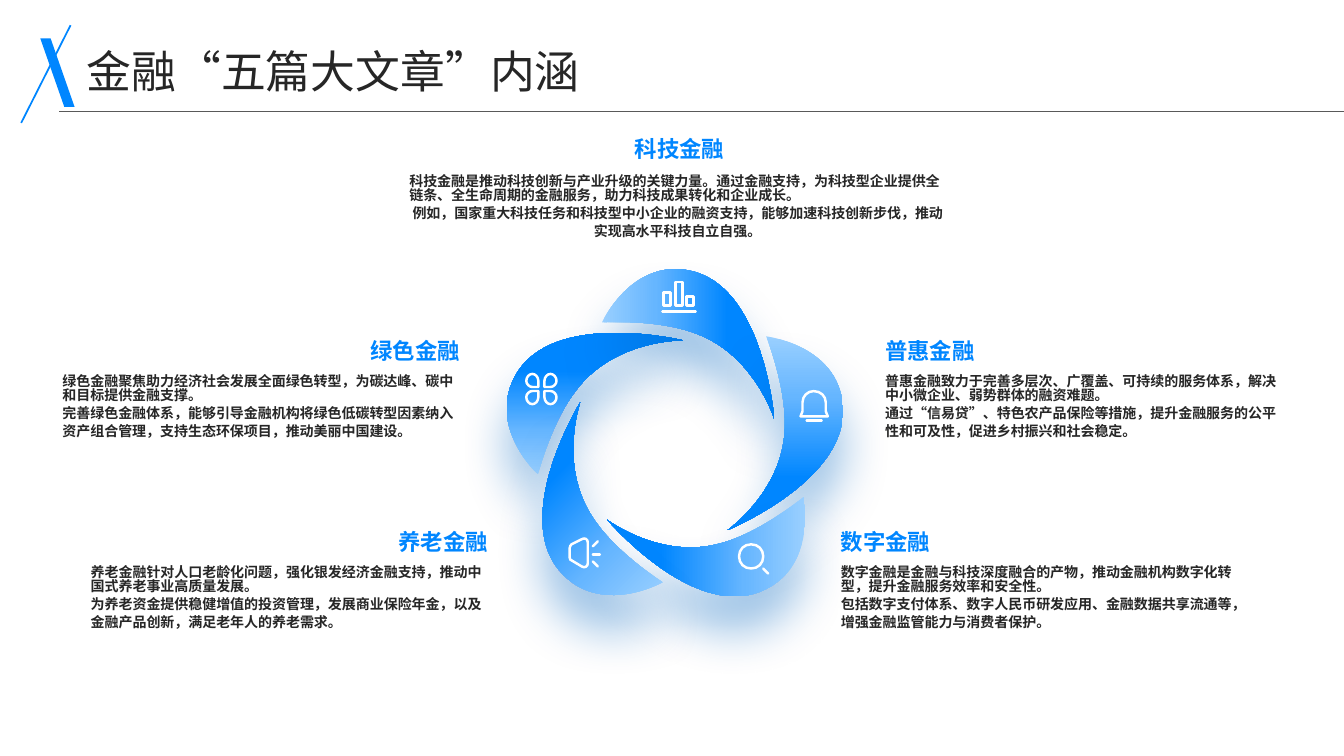
from copy import deepcopy
from math import cos, radians, sin

from pptx import Presentation
from pptx.dml.color import RGBColor
from pptx.enum.shapes import MSO_CONNECTOR, MSO_SHAPE
from pptx.enum.text import MSO_ANCHOR, PP_ALIGN
from pptx.oxml import parse_xml
from pptx.oxml.ns import nsdecls, qn
from pptx.oxml.xmlchemy import OxmlElement
from pptx.util import Inches, Pt

LEFT, CENTER, RIGHT = PP_ALIGN.LEFT, PP_ALIGN.CENTER, PP_ALIGN.RIGHT
TOP, MIDDLE, BOTTOM = MSO_ANCHOR.TOP, MSO_ANCHOR.MIDDLE, MSO_ANCHOR.BOTTOM
BLUE = RGBColor(0x00, 0x86, 0xFF)
INK = RGBColor(0x26, 0x26, 0x26)
GRAY = RGBColor(0x59, 0x59, 0x59)
WHITE = RGBColor(0xFF, 0xFF, 0xFF)
PETAL_STOPS = [(0, RGBColor(0x99, 0xCF, 0xFF)), (0.31, RGBColor(0x66, 0xB6, 0xFF)), (0.73, BLUE)]
FONT = "Noto Sans CJK SC"

TITLE = "金融“五篇大文章”内涵"
# heading, body left, body top, body width, heading alignment, second paragraph alignment, paragraphs
TOPICS = [
    ("绿色金融", 0.62, 3.68, 3.94, RIGHT, LEFT, [
        "绿色金融聚焦助力经济社会发展全面绿色转型，为碳达峰、碳中和目标提供金融支撑。",
        "完善绿色金融体系，能够引导金融机构将绿色低碳转型因素纳入资产组合管理，支持生态环保项目，推动美丽中国建设。"]),
    ("养老金融", 0.9, 5.58, 3.94, RIGHT, LEFT, [
        "养老金融针对人口老龄化问题，强化银发经济金融支持，推动中国式养老事业高质量发展。",
        "为养老资金提供稳健增值的投资管理，发展商业保险年金，以及金融产品创新，满足老年人的养老需求。"]),
    ("普惠金融", 8.78, 3.68, 3.94, LEFT, LEFT, [
        "普惠金融致力于完善多层次、广覆盖、可持续的服务体系，解决中小微企业、弱势群体的融资难题。",
        "通过“信易贷”、特色农产品保险等措施，提升金融服务的公平性和可及性，促进乡村振兴和社会稳定。"]),
    ("数字金融", 8.34, 5.58, 3.94, LEFT, LEFT, [
        "数字金融是金融与科技深度融合的产物，推动金融机构数字化转型，提升金融服务效率和安全性。",
        "包括数字支付体系、数字人民币研发应用、金融数据共享流通等，增强金融监管能力与消费者保护。"]),
    ("科技金融", 4.06, 1.7, 5.32, CENTER, CENTER, [
        "科技金融是推动科技创新与产业升级的关键力量。通过金融支持，为科技型企业提供全链条、全生命周期的金融服务，助力科技成果转化和企业成长。",
        "例如，国家重大科技任务和科技型中小企业的融资支持，能够加速科技创新步伐，推动实现高水平科技自立自强。"]),
]

# An outline is a start point, then steps: (x, y) is a line, six numbers are a cubic curve.
RING_CENTER = (6.69, 4.39)
TOP_PETAL = [(5.97, 3.2), (5.97, 3.2, 6.27, 2.55, 6.86, 2.69), (7.58, 2.86, 7.68, 4.16, 7.68, 4.16),
             (7.68, 4.16, 7.49, 3.54, 6.93, 3.32), (6.54, 3.16, 5.97, 3.2, 5.97, 3.2)]
PETALS = [(-72, 90), (0, 0), (72, 270), (144, 180), (216, 135)]  # turn, gradient angle

CLOVER_CENTER = (5.37, 3.86)
LEAF = [(0.03, 0.02), (0.09, 0.02), (0.12, 0.02, 0.15, 0.05, 0.15, 0.08),
        (0.15, 0.12, 0.12, 0.15, 0.09, 0.15), (0.06, 0.15, 0.03, 0.12, 0.03, 0.08)]
BARS = [(6.58, 2.9), (6.7, 2.8), (6.81, 2.94)]
BAR_WIDTH, BAR_BOTTOM = 0.07, 3.03
BELL = [(7.94, 4.13), (7.96, 4.08), (7.96, 3.99), (7.96, 3.93, 8.01, 3.88, 8.07, 3.88),
        (8.14, 3.88, 8.19, 3.93, 8.19, 3.99), (8.19, 4.08), (8.21, 4.13)]
LENS = [(7.33, 5.52), (7.33, 5.45, 7.38, 5.4, 7.45, 5.4), (7.52, 5.4, 7.57, 5.45, 7.57, 5.52),
        (7.57, 5.59, 7.52, 5.64, 7.45, 5.64), (7.38, 5.64, 7.33, 5.59, 7.33, 5.52)]
HORN = [(5.65, 5.44), (5.65, 5.42, 5.66, 5.41, 5.67, 5.4), (5.77, 5.35),
        (5.8, 5.33, 5.83, 5.35, 5.83, 5.38), (5.83, 5.59),
        (5.83, 5.62, 5.8, 5.64, 5.77, 5.62), (5.67, 5.56), (5.66, 5.56, 5.65, 5.55, 5.65, 5.53)]


def pairs(part):
    return list(zip(part[::2], part[1::2]))


def remap(outline, move):
    """Apply move(x, y) to every point of an outline."""
    return [sum((move(x, y) for x, y in pairs(part)), ()) for part in outline]


def turn_on_ring(degrees):
    """Return a move that rotates clockwise about the centre of the ring."""
    (cx, cy), c, s = RING_CENTER, cos(radians(degrees)), sin(radians(degrees))
    return lambda x, y: (cx + (x - cx) * c - (y - cy) * s, cy + (x - cx) * s + (y - cy) * c)


def points_along(outline, steps=20):
    """Sample an outline, to find its bounds."""
    points = [outline[0]]
    for part in outline[1:]:
        knots = [points[-1]] + pairs(part)
        if len(part) == 2:
            points.append(part)
            continue
        for t in (step / steps for step in range(1, steps + 1)):
            weights = ((1 - t) ** 3, 3 * t * (1 - t) ** 2, 3 * t * t * (1 - t), t ** 3)
            points.append(tuple(sum(w * k[axis] for w, k in zip(weights, knots)) for axis in (0, 1)))
    return points


def add_outline(page, outlines):
    """Draw one freeform with true curves; an outline of only two points stays open."""
    xs, ys = zip(*(point for outline in outlines for point in points_along(outline)))
    left, top = Inches(min(xs)), Inches(min(ys))
    builder = page.shapes.build_freeform(left, top, scale=1.0)
    builder.add_line_segments([(Inches(max(xs)), Inches(max(ys)))], close=False)
    shape = builder.convert_to_shape()
    track = next(shape._element.spPr.iter(qn("a:path")))
    for child in list(track):
        track.remove(child)
    for outline in outlines:
        for index, part in enumerate(outline):
            tag = "a:moveTo" if index == 0 else "a:lnTo" if len(part) == 2 else "a:cubicBezTo"
            step = OxmlElement(tag)
            for x, y in pairs(part):
                point = OxmlElement("a:pt")
                point.set("x", str(Inches(x) - left))
                point.set("y", str(Inches(y) - top))
                step.append(point)
            track.append(step)
        if len(outline) > 2:
            track.append(OxmlElement("a:close"))
    shape.shadow.inherit = False
    return shape


def add_petal(page, turn, angle):
    petal = add_outline(page, [remap(TOP_PETAL, turn_on_ring(turn))])
    petal.line.fill.background()
    petal.fill.gradient()
    petal.fill.gradient_angle = angle
    properties = petal._element.spPr
    stop_list = properties.find(qn("a:gradFill")).find(qn("a:gsLst"))
    stop_list.append(deepcopy(stop_list[0]))
    for stop, (position, color) in zip(petal.fill.gradient_stops, PETAL_STOPS):
        stop.position = position
        stop.color.rgb = color
    properties.find(qn("a:effectLst")).append(parse_xml(
        f'<a:outerShdw {nsdecls("a")} blurRad="{Pt(35)}" dist="{Pt(25)}" dir="5400000" '
        'algn="t" rotWithShape="0"><a:srgbClr val="0064BF"><a:alpha val="40000"/>'
        '</a:srgbClr></a:outerShdw>'))


def add_icon(page, outlines):
    icon = add_outline(page, outlines)
    icon.fill.background()
    icon.line.color.rgb = WHITE
    icon.line.width = Pt(1.75)
    line = icon._element.spPr.find(qn("a:ln"))
    line.set("cap", "rnd")
    line.append(OxmlElement("a:round"))


def add_text(page, texts, left, top, width, height, *, size, color=INK, bold=False,
             aligns=(LEFT,), spacings=(1,), anchor=TOP, inset=0.04):
    box = page.shapes.add_textbox(Inches(left), Inches(top), Inches(width), Inches(height))
    frame = box.text_frame
    frame.word_wrap = True
    frame.vertical_anchor = anchor
    frame.margin_left = frame.margin_right = 0
    frame.margin_top = frame.margin_bottom = Inches(inset)
    for index, (text, align, spacing) in enumerate(zip(texts, aligns, spacings)):
        para = frame.add_paragraph() if index else frame.paragraphs[0]
        para.alignment = align
        para.line_spacing = spacing
        span = para.add_run()
        span.text = text
        span.font.size = Pt(size)
        span.font.bold = bold
        span.font.color.rgb = color
        span.font.name = FONT
        east_asian = OxmlElement("a:ea")
        east_asian.set("typeface", FONT)
        properties = span.font._element
        properties.set("lang", "zh-CN")
        properties.append(east_asian)


def add_line(page, start, end, color, width):
    line = page.shapes.add_connector(MSO_CONNECTOR.STRAIGHT, *map(Inches, start + end))
    line.line.color.rgb = color
    line.line.width = Pt(width)
    line._element.spPr.append(OxmlElement("a:effectLst"))


def add_title(page):
    add_text(page, [TITLE], 0.86, 0.44, 11.74, 0.47, size=32, spacings=[1.1], anchor=MIDDLE, inset=0)
    slash = page.shapes.add_shape(MSO_SHAPE.PARALLELOGRAM, *map(Inches, (0.4, 0.38, 0.34, 0.68)))
    slash.adjustments[0] = 0.7
    slash._element.spPr.find(qn("a:xfrm")).set("flipH", "1")
    slash.shadow.inherit = False
    slash.fill.solid()
    slash.fill.fore_color.rgb = BLUE
    slash.line.fill.background()
    add_line(page, (0.7, 0.25), (0.21, 1.22), BLUE, 1.25)
    add_line(page, (0.59, 1.11), (13.33, 1.11), GRAY, 0.75)


deck = Presentation()
deck.slide_width, deck.slide_height = Inches(13.33), Inches(7.5)
page = deck.slides.add_slide(deck.slide_layouts[6])

for turn, angle in PETALS:
    add_petal(page, turn, angle)

for heading, left, top, width, align, last_align, texts in TOPICS:
    heading_left = 4.77 if align == CENTER else left
    heading_top = top - (0.73 if align == CENTER else 0.71)
    add_text(page, [heading], heading_left, heading_top, 3.94, 0.68, size=16, color=BLUE,
             bold=True, aligns=[align], spacings=[1.2], anchor=BOTTOM)
    add_text(page, texts, left, top, width, 0.94, size=10, bold=True,
             aligns=[LEFT, last_align], spacings=[0.84, 1.06])

bars = [[(x, y), (x + BAR_WIDTH, y), (x + BAR_WIDTH, BAR_BOTTOM), (x, BAR_BOTTOM)] for x, y in BARS]
cx, cy = CLOVER_CENTER
leaves = [remap(LEAF, lambda x, y: (cx + across * x, cy + down * y))
          for across in (-1, 1) for down in (-1, 1)]
rays = [[(5.88, 5.42), (5.93, 5.37)], [(5.88, 5.5), (5.95, 5.5)], [(5.88, 5.57), (5.93, 5.62)]]
add_icon(page, [BELL, [(8, 4.17), (8.15, 4.17)]])
add_icon(page, bars + [[(6.57, 3.09), (6.9, 3.09)]])
add_icon(page, [LENS, [(7.57, 5.64), (7.62, 5.69)]])
add_icon(page, [HORN] + rays)
add_icon(page, leaves)

add_title(page)
deck.save("out.pptx")
